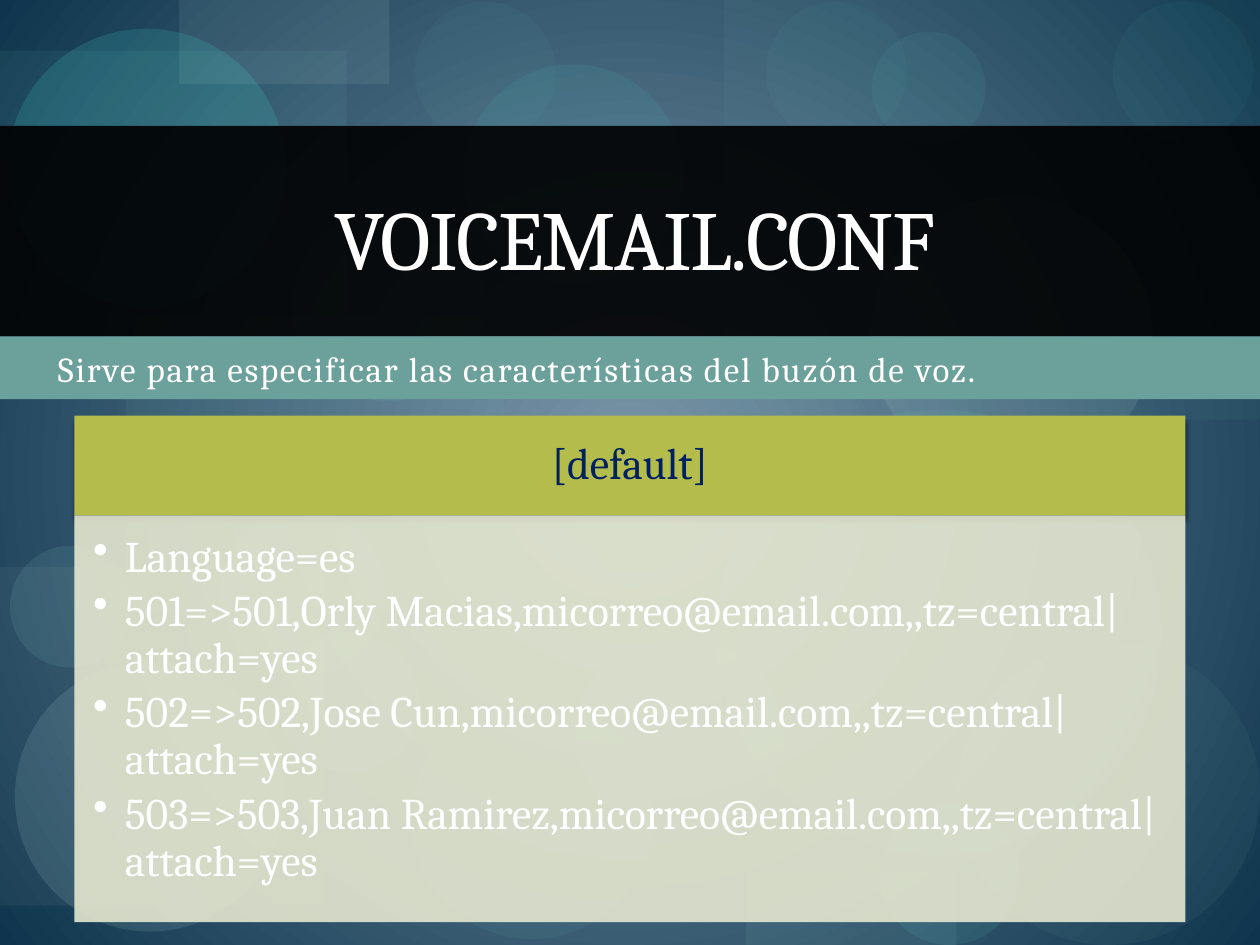
from dataclasses import dataclass

from pptx import Presentation
from pptx import util as u
from pptx.dml.color import RGBColor
from pptx.enum import shapes, text
from pptx.oxml import parse_xml
from pptx.oxml.ns import nsdecls, qn


@dataclass(frozen=True)
class Theme:
    font: str = "Cambria"
    white: str = "FFFFFF"
    black: str = "000000"
    navy: str = "002060"
    teal: str = "6BA09B"
    lime: str = "B4BC4C"
    cream: str = "E5E7D0"
    glow: str = "7B96AA"
    deep: str = "0E354D"
    title: int = 48
    body: int = 25
    sub: int = 20


T = Theme()
RECT = shapes.MSO_SHAPE.RECTANGLE
OVAL = shapes.MSO_SHAPE.OVAL
WIDE = 25.4

# left, top, width, height in cm, colour, opacity in percent
DECOR = [
    (RECT, 2.54, 6.38, 7.62, 5.92, "79B5B0", 9),
    (OVAL, 8.28, 14.1, 4.88, 4.83, "549791", 13),
    (RECT, 14.6, 0, 10.8, 8.46, "79B5B0", 6),
    (RECT, 0, 11.43, 6.55, 6.83, "B2B7BA", 8),
    (OVAL, 11.61, 6.63, 6.05, 6.05, "70A39E", 8),
    (OVAL, 17.73, 16.23, 2.82, 2.82, "65E8DC", 9),
    (OVAL, 17.55, 3.96, 5.69, 5.69, "C1E8E4", 11),
    (OVAL, 0.3, 13.34, 5.44, 5.44, "C1E8E4", 12),
    (OVAL, 5.61, 12.73, 2.84, 2.84, "65E8DC", 9),
    (OVAL, 11.58, 12.85, 4.22, 3.89, "44EADC", 8),
    (RECT, 0, 1.02, 6.99, 6.63, "77D6CE", 7),
    (RECT, 3.61, 0, 4.24, 1.7, "BED7D4", 10),
    (OVAL, 0.15, 0.58, 5.61, 5.61, "44EADC", 15),
    (OVAL, 0.2, 11, 2.46, 2.46, "97DCD6", 10),
    (OVAL, 5.89, 4.19, 3.89, 3.89, "65E8DC", 9),
    (OVAL, 9.35, 1.3, 4.42, 4.42, "44EADC", 8),
    (OVAL, 14.43, 8.26, 8.99, 8.99, "61CDC4", 10),
    (OVAL, 15.44, 0.03, 2.84, 2.84, "65E8DC", 4),
    (OVAL, 19.3, 12.95, 6.1, 6.1, "70A39E", 8),
    (OVAL, 4.45, 10.29, 3.33, 3.33, "97DCD6", 10),
    (OVAL, 17.58, 0.64, 2.29, 2.29, "65E8DC", 6),
    (OVAL, 22.43, 0.03, 2.84, 2.84, "65E8DC", 4),
    (RECT, 15.04, 17.58, 4.24, 1.47, "79B5B0", 10),
    (OVAL, 8.36, 0.03, 2.84, 2.84, "65E8DC", 4),
]
USERS = [(501, "Orly Macias"), (502, "Jose Cun"), (503, "Juan Ramirez")]


def paint(slide):
    """Fill the background with a glow that fades out from the centre."""
    fill = slide.background.fill
    fill.gradient()
    for stop, hue, pos in zip(fill.gradient_stops, (T.glow, T.deep), (0, 1)):
        stop.color.rgb = RGBColor.from_string(hue)
        stop.position = pos
    grad = slide.element.find(".//" + qn("a:gradFill"))
    grad.replace(grad.find(qn("a:lin")), parse_xml(
        f'<a:path {nsdecls("a")} path="circle"><a:fillToRect l="50000" '
        't="50000" r="50000" b="50000"/></a:path>'))


def block(slide, kind, x, y, w, h, hue, alpha=100):
    shape = slide.shapes.add_shape(kind, u.Cm(x), u.Cm(y), u.Cm(w), u.Cm(h))
    shape.shadow.inherit = False
    shape.line.fill.background()
    shape.fill.solid()
    shape.fill.fore_color.rgb = RGBColor.from_string(hue)
    if alpha < 100:
        node = shape.element.spPr.find(".//" + qn("a:srgbClr"))
        node.append(parse_xml(
            f'<a:alpha {nsdecls("a")} val="{alpha * 1000}"/>'))
    return shape


def shade(shape):
    """Give the shape a soft shadow below it."""
    shape.element.spPr.find(qn("a:effectLst")).append(parse_xml(
        f'<a:outerShdw {nsdecls("a")} blurRad="{u.Pt(3)}" dist="{u.Pt(3)}" '
        f'dir="5400000" rotWithShape="0"><a:srgbClr val="{T.black}">'
        '<a:alpha val="60000"/></a:srgbClr></a:outerShdw>'))


def label(slide, x, y, w, h):
    return slide.shapes.add_textbox(u.Cm(x), u.Cm(y), u.Cm(w), u.Cm(h))


def setup(shape, anchor, left=0.25, top=0.13, right=0.25, base=0.13):
    frame = shape.text_frame
    frame.word_wrap = True
    frame.vertical_anchor = anchor
    frame.margin_left, frame.margin_top = u.Cm(left), u.Cm(top)
    frame.margin_right, frame.margin_bottom = u.Cm(right), u.Cm(base)
    return frame


def write(para, words, size, hue, align=text.PP_ALIGN.LEFT, gap=0):
    """Add one run; gap is the letter spacing in points."""
    para.alignment = align
    run = para.add_run()
    run.text = words
    run.font.name = T.font
    run.font.size = u.Pt(size)
    run.font.color.rgb = RGBColor.from_string(hue)
    if gap:
        run.font._element.set("spc", str(gap * 100))


def bullet(para):
    props = para._p.get_or_add_pPr()
    props.set("marL", str(u.Cm(0.64)))
    props.set("indent", str(-u.Cm(0.64)))
    props.append(parse_xml(f'<a:buChar {nsdecls("a")} char="•"/>'))


def items(frame, lines):
    for i, line in enumerate(lines):
        para = frame.add_paragraph() if i else frame.paragraphs[0]
        para.line_spacing = 0.9
        para.space_after = u.Pt(4)
        write(para, line, T.body, T.white)
        bullet(para)


def main():
    deck = Presentation()
    deck.slide_width, deck.slide_height = u.Cm(WIDE), u.Cm(19.05)
    slide = deck.slides.add_slide(deck.slide_layouts[6])
    mid, top = text.MSO_ANCHOR.MIDDLE, text.MSO_ANCHOR.TOP
    center = text.PP_ALIGN.CENTER

    paint(slide)
    for spot in DECOR:
        block(slide, *spot)
    block(slide, RECT, 0, 6.78, WIDE, 1.27, T.teal)
    block(slide, RECT, 0, 2.54, WIDE, 4.24, T.black, 90)

    sub = setup(label(slide, 0, 6.88, WIDE, 1.07), top, left=1.17)
    write(sub.paragraphs[0],
          "Sirve para especificar las características del buzón de voz.",
          T.sub, T.white, gap=1)
    title = setup(label(slide, 1.27, 2.97, 23.06, 3.61), mid)
    write(title.paragraphs[0], "VOICEMAIL.CONF", T.title, T.white, center, -1)

    head = block(slide, RECT, 1.5, 8.38, 22.4, 2.01, T.lime)
    shade(head)
    para = setup(head, mid, 0.48, 0.28, 0.48, 0.28).paragraphs[0]
    para.line_spacing = 0.9
    write(para, "[default]", T.body, T.navy, center)

    panel = block(slide, RECT, 1.5, 10.39, 22.4, 8.2, T.cream, 90)
    lines = ["Language=es"] + [
        f"{num}=>{num},{name},micorreo@email.com,,tz=central|attach=yes"
        for num, name in USERS]
    items(setup(panel, top, 0.38, 0.38, 0.48, 0.56), lines)

    deck.save("out.pptx")


if __name__ == "__main__":
    main()
